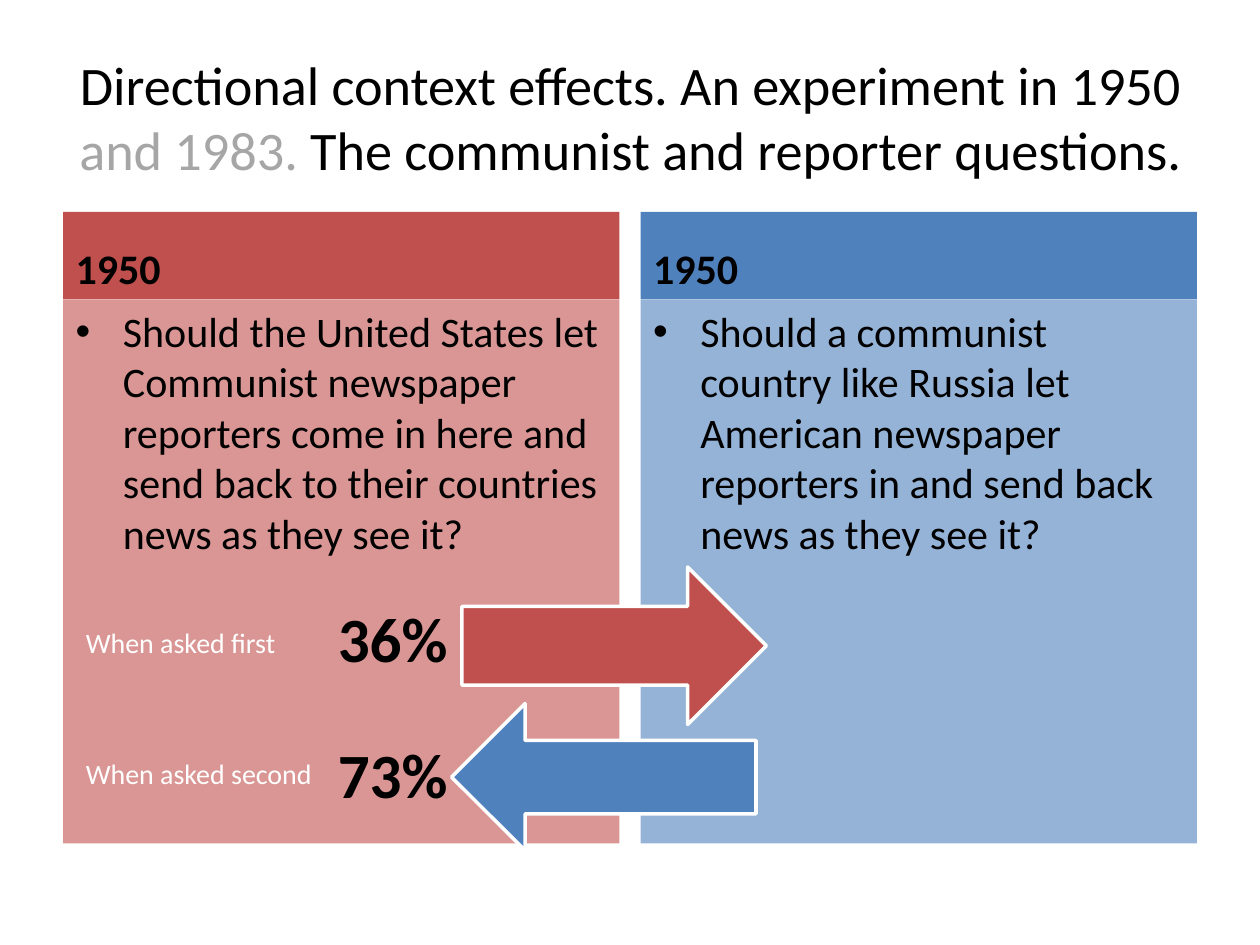
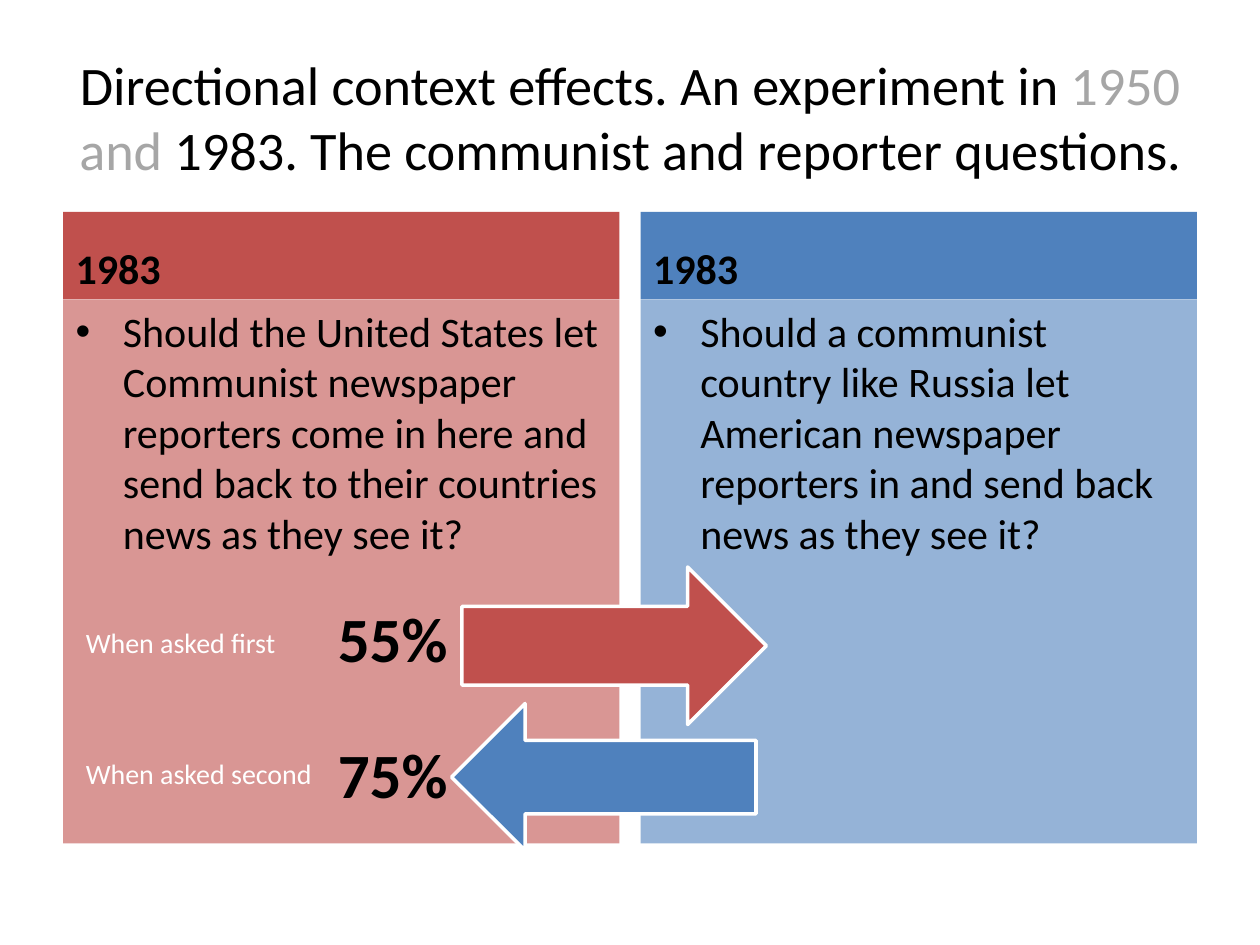
from dataclasses import dataclass

from pptx import Presentation
from pptx.dml.color import RGBColor
from pptx.enum.shapes import MSO_SHAPE
from pptx.enum.text import MSO_ANCHOR, MSO_AUTO_SIZE, PP_ALIGN
from pptx.util import Pt

RIGHT_ARROW = MSO_SHAPE.RIGHT_ARROW
TOP, MIDDLE, BOTTOM = MSO_ANCHOR.TOP, MSO_ANCHOR.MIDDLE, MSO_ANCHOR.BOTTOM
NO_FIT, GROW = MSO_AUTO_SIZE.NONE, MSO_AUTO_SIZE.SHAPE_TO_FIT_TEXT
CENTER = PP_ALIGN.CENTER
COMPARISON_LAYOUT = 4


@dataclass(frozen=True)
class Theme:
    font: str = "Calibri"
    black: str = "000000"
    white: str = "FFFFFF"
    muted: str = "A6A6A6"
    red: str = "C0504D"
    light_red: str = "D99694"
    blue: str = "4F81BD"
    light_blue: str = "95B3D7"
    title_size: int = 31
    body_size: int = 24
    percent_size: int = 36
    label_size: int = 16


THEME = Theme()

# Shared geometry, in points
MARGIN, COLUMN_W, GAP = 36, 318, 12
HEADER_TOP, HEADER_H, QUESTION_H = 121, 50, 311

COLUMNS = [
    (THEME.red, THEME.light_red,
     "Should the United States let Communist newspaper reporters come in here "
     "and send back to their countries news as they see it?"),
    (THEME.blue, THEME.light_blue,
     "Should a communist country like Russia let American newspaper reporters "
     "in and send back news as they see it?"),
]

# Label, label width, label top, percent top, arrow box, rotation, colour
RESULT_ROWS = [
    ("When asked first", 126, 354, 339, (264, 324, 174, 90), 0, THEME.red),
    ("When asked second", 150, 429, 417, (258, 402, 174, 84), 180, THEME.blue),
]

# Title runs as (text, is muted), year, percentages asked first and second
SLIDES = [
    ([("Directional context effects. An experiment in 1950 ", False),
      ("and 1983. ", True),
      ("The communist and reporter questions.", False)],
     "1950", ("36%", "73%")),
    ([("Directional context effects. An experiment in ", False),
      ("1950 and", True),
      (" 1983. The communist and reporter questions.", False)],
     "1983", ("55%", "75%")),
]


def rgb(color):
    return RGBColor.from_string(color)


def place(sp, left, top, width, height):
    sp.left, sp.top, sp.width, sp.height = map(Pt, (left, top, width, height))


def style(p, size, color=THEME.black, bold=False):
    p.font.name = THEME.font
    p.font.size = Pt(size)
    p.font.bold = bold
    p.font.color.rgb = rgb(color)


def fill(sp, color):
    sp.fill.solid()
    sp.fill.fore_color.rgb = rgb(color)


def add_title(s, runs):
    sp = s.shapes.title
    place(sp, MARGIN, 21.6, 648, 90)
    tf = sp.text_frame
    tf.auto_size, tf.vertical_anchor = NO_FIT, MIDDLE
    p = tf.paragraphs[0]
    p.alignment = CENTER
    style(p, THEME.title_size)
    for text, is_muted in runs:
        r = p.add_run()
        r.text = text
        r.font.color.rgb = rgb(THEME.muted if is_muted else THEME.black)


def fill_panel(sp, text, box, color, anchor, bold=False):
    place(sp, *box)
    fill(sp, color)
    tf = sp.text_frame
    tf.text = text
    tf.auto_size, tf.vertical_anchor = NO_FIT, anchor
    style(tf.paragraphs[0], THEME.body_size, bold=bold)


def add_column(s, index, year):
    dark, light, question = COLUMNS[index]
    left = MARGIN + index * (COLUMN_W + GAP)
    header, body = (s.placeholders[2 * index + n] for n in (1, 2))
    fill_panel(header, year, (left, HEADER_TOP, COLUMN_W, HEADER_H),
               dark, BOTTOM, bold=True)
    fill_panel(body, question,
               (left, HEADER_TOP + HEADER_H, COLUMN_W, QUESTION_H), light, TOP)


def add_arrow(s, box, rotation, color):
    sp = s.shapes.add_shape(RIGHT_ARROW, *map(Pt, box))
    sp.rotation = rotation
    sp.shadow.inherit = False
    fill(sp, color)
    sp.line.color.rgb = rgb(THEME.white)
    sp.line.width = Pt(2)


def add_text(s, text, box, size, color=THEME.black, bold=False, wrap=True):
    tf = s.shapes.add_textbox(*map(Pt, box)).text_frame
    tf.text = text
    tf.word_wrap, tf.auto_size = wrap, GROW
    style(tf.paragraphs[0], size, color, bold)


def add_result(s, row, percent):
    label, label_w, label_top, percent_top, arrow_box, rotation, color = row
    add_arrow(s, arrow_box, rotation, color)
    add_text(s, percent, (186, percent_top, 78, 51), THEME.percent_size,
             bold=True, wrap=False)
    add_text(s, label, (42, label_top, label_w, 26.6), THEME.label_size,
             THEME.white)


def main():
    prs = Presentation()
    prs.slide_width, prs.slide_height = Pt(720), Pt(540)
    for title_runs, year, percents in SLIDES:
        s = prs.slides.add_slide(prs.slide_layouts[COMPARISON_LAYOUT])
        add_title(s, title_runs)
        # Question columns
        for index in range(len(COLUMNS)):
            add_column(s, index, year)
        # Results by question order
        for row, percent in zip(RESULT_ROWS, percents):
            add_result(s, row, percent)
    prs.save("out.pptx")


if __name__ == "__main__":
    main()
